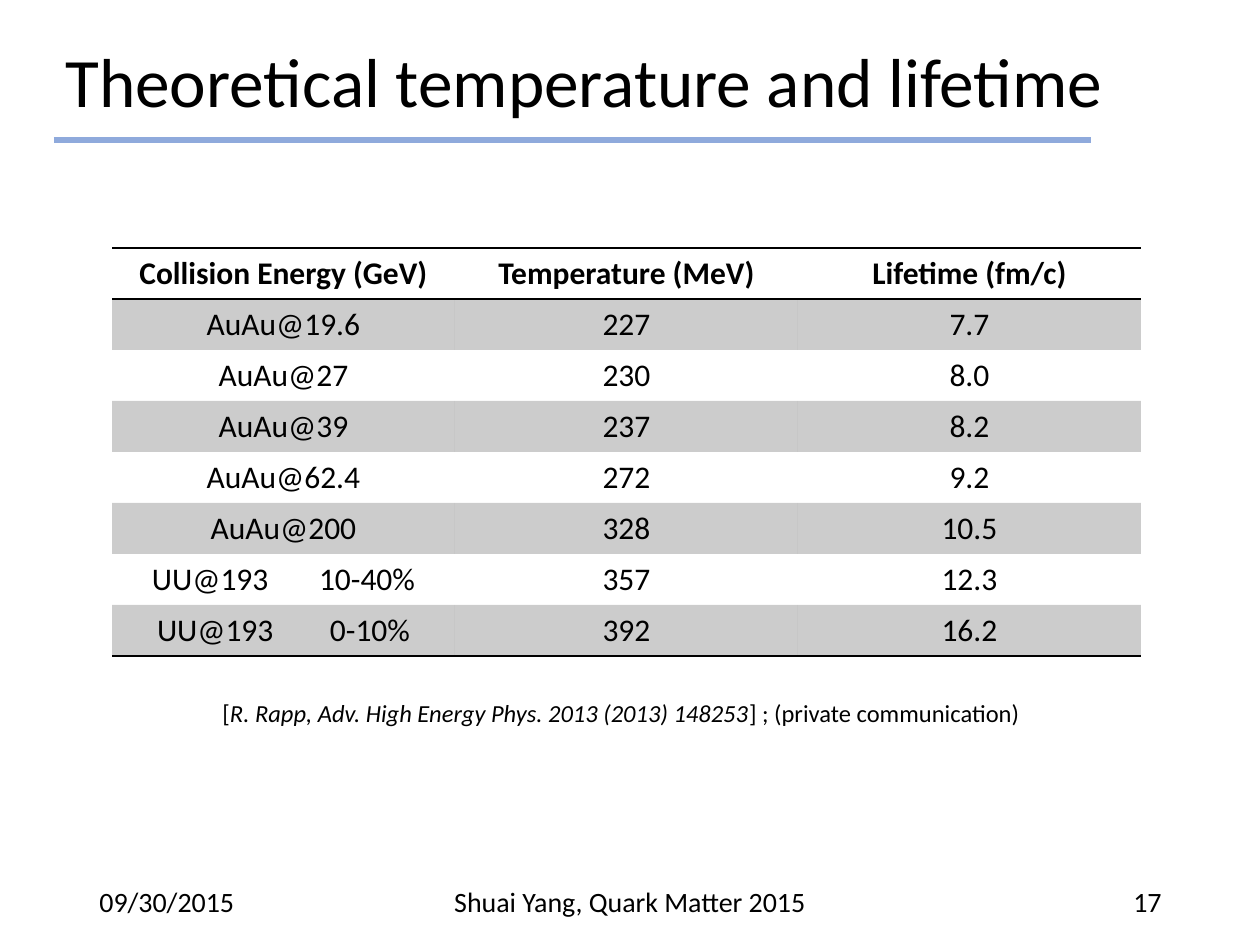
from pptx import Presentation
from pptx import util as u
from pptx.dml.color import RGBColor
from pptx.enum import shapes, text
from pptx.oxml import ns
from lxml import etree

BLACK = RGBColor(0x00, 0x00, 0x00)
BLUE = RGBColor(0x8F, 0xAA, 0xDC)
LEFT, CENTER, RIGHT = text.PP_ALIGN.LEFT, text.PP_ALIGN.CENTER, text.PP_ALIGN.RIGHT


def px(length):
    return u.Emu(round(length * 914400 / 126))


def add_element(parent, tag, **attributes):
    return etree.SubElement(parent, ns.qn(tag), attributes)


class SlideBuilder:
    font_name = "Calibri"
    band_opacity = 20000

    def __init__(self, slide):
        self.slide = slide

    def style_font(self, font, size, bold=False):
        font.name = self.font_name
        font.size = u.Pt(size)
        font.bold = bold
        font.color.rgb = BLACK

    def add_text(self, left, top, width, height, runs, size, align=LEFT,
                 anchor=text.MSO_ANCHOR.MIDDLE, line_spacing=None):
        box = self.slide.shapes.add_textbox(px(left), px(top), px(width), px(height))
        frame = box.text_frame
        frame.word_wrap = True
        frame.vertical_anchor = anchor
        paragraph = frame.paragraphs[0]
        paragraph.alignment = align
        paragraph.line_spacing = line_spacing
        for content, italic in runs:
            run = paragraph.add_run()
            run.text = content
            self.style_font(run.font, size)
            run.font.italic = italic

    def add_line(self, start, end, color, width):
        line = self.slide.shapes.add_connector(
            shapes.MSO_CONNECTOR.STRAIGHT, *map(px, start + end))
        line.line.color.rgb = color
        line.line.width = u.Pt(width)
        add_element(line._element.spPr, "a:effectLst")

    def set_borders(self, cell, ruled_sides):
        properties = cell._tc.get_or_add_tcPr()
        for side in "LRTB":
            border = add_element(properties, f"a:ln{side}", w=str(u.Pt(1)))
            if side in ruled_sides:
                fill = add_element(border, "a:solidFill")
                add_element(fill, "a:srgbClr", val=str(BLACK))
            else:
                add_element(border, "a:noFill")

    def fill_cell(self, cell, banded):
        if not banded:
            cell.fill.background()
            return
        cell.fill.solid()
        cell.fill.fore_color.rgb = BLACK
        color = cell._tc.tcPr.find(".//" + ns.qn("a:solidFill") + "/" + ns.qn("a:srgbClr"))
        for color in cell._tc.tcPr.findall(ns.qn("a:solidFill") + "/" + ns.qn("a:srgbClr")):
            add_element(color, "a:alpha", val=str(self.band_opacity))

    def set_tab(self, cell, margin, position):
        cell.margin_left = px(margin)
        paragraph = cell.text_frame.paragraphs[0]
        paragraph.alignment = LEFT
        tabs = add_element(paragraph._p.get_or_add_pPr(), "a:tabLst")
        add_element(tabs, "a:tab", pos=str(px(position)), algn="l")

    def add_table(self, left, top, column_width, row_height, rows, size, tab_stops):
        row_count, column_count = len(rows), len(rows[0])
        table = self.slide.shapes.add_table(
            row_count, column_count, px(left), px(top),
            px(column_width * column_count), px(row_height * row_count)).table
        table.horz_banding = False
        for row_index, values in enumerate(rows):
            table.rows[row_index].height = px(row_height)
            ruled_sides = {0: "TB", 1: "T", row_count - 1: "B"}.get(row_index, "")
            for column_index, value in enumerate(values):
                cell = table.cell(row_index, column_index)
                self.set_borders(cell, ruled_sides)
                self.fill_cell(cell, row_index % 2 == 1)
                paragraph = cell.text_frame.paragraphs[0]
                paragraph.text = value
                paragraph.alignment = CENTER
                if value in tab_stops:
                    self.set_tab(cell, *tab_stops[value])
                self.style_font(paragraph.runs[0].font, size, bold=row_index == 0)


def main():
    presentation = Presentation()
    presentation.slide_width, presentation.slide_height = px(1260), px(945)
    builder = SlideBuilder(presentation.slides.add_slide(presentation.slide_layouts[6]))

    builder.add_line((54, 140), (1091, 140), BLUE, 3)
    builder.add_text(53, 20, 1086, 131, [("Theoretical temperature and lifetime", False)],
                     39.6, line_spacing=0.9)

    footers = [
        (87, 284, "09/30/2015", LEFT),
        (417, 426, "Shuai Yang, Quark Matter 2015", CENTER),
        (890, 284, "17", RIGHT),
    ]
    for left, width, content, align in footers:
        builder.add_text(left, 876, width, 50, [(content, False)], 16, align)

    mid_central, central = "UU@193\t10-40%", "UU@193\t0-10%"
    rows = [
        ("Collision Energy (GeV)", "Temperature (MeV)", "Lifetime (fm/c)"),
        ("AuAu@19.6", "227", "7.7"),
        ("AuAu@27", "230", "8.0"),
        ("AuAu@39", "237", "8.2"),
        ("AuAu@62.4", "272", "9.2"),
        ("AuAu@200", "328", "10.5"),
        (mid_central, "357", "12.3"),
        (central, "392", "16.2"),
    ]
    tab_stops = {mid_central: (40, 167), central: (45, 173)}
    builder.add_table(112, 248, 343, 51, rows, 18, tab_stops)

    citation = [
        ("[", False),
        ("R. Rapp, Adv. High Energy Phys. 2013 (2013) 148253", True),
        ("] ; (private communication)", False),
    ]
    builder.add_text(210, 692, 832, 43, citation, 14, anchor=text.MSO_ANCHOR.TOP)

    presentation.save("out.pptx")


if __name__ == "__main__":
    main()
